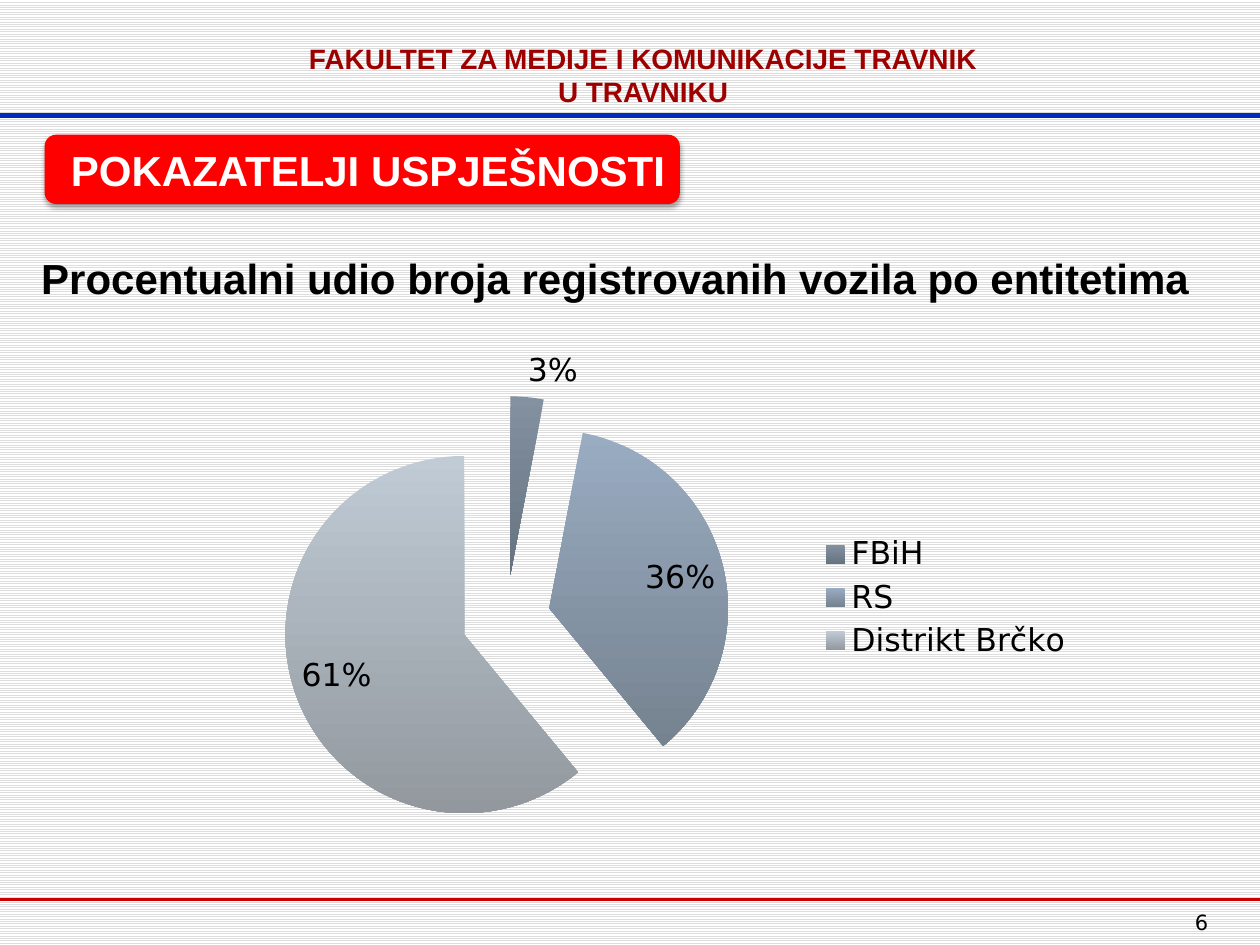
from lxml import etree
from pptx import Presentation
from pptx.chart.data import CategoryChartData
from pptx.dml.color import RGBColor
from pptx.enum.chart import XL_CHART_TYPE, XL_LABEL_POSITION, XL_LEGEND_POSITION
from pptx.enum.dml import MSO_PATTERN
from pptx.enum.shapes import MSO_CONNECTOR, MSO_SHAPE
from pptx.enum.text import MSO_ANCHOR, PP_ALIGN
from pptx.oxml import parse_xml
from pptx.oxml.ns import qn
from pptx.util import Pt

PIE = XL_CHART_TYPE.PIE
BEST_FIT = XL_LABEL_POSITION.BEST_FIT
LEGEND_RIGHT = XL_LEGEND_POSITION.RIGHT
LIGHT_HORIZONTAL = MSO_PATTERN.LIGHT_HORIZONTAL
STRAIGHT = MSO_CONNECTOR.STRAIGHT
BANNER = MSO_SHAPE.FLOWCHART_ALTERNATE_PROCESS
MIDDLE = MSO_ANCHOR.MIDDLE
LEFT, CENTER, RIGHT = PP_ALIGN.LEFT, PP_ALIGN.CENTER, PP_ALIGN.RIGHT

WIDTH, HEIGHT = 720, 540
SHARES = {"FBiH": 3, "RS": 36, "Distrikt Brčko": 61}
SLICE_GRADIENTS = [("8391A1", "66727F"), ("9AACC2", "75828F"), ("C0CBD5", "92989E")]
BANNER_SHADOW = """
<a:effectLst xmlns:a="http://schemas.openxmlformats.org/drawingml/2006/main">
  <a:outerShdw blurRad="39370" dist="22860" dir="5400000" rotWithShape="0">
    <a:srgbClr val="000000"><a:alpha val="35000"/></a:srgbClr>
  </a:outerShdw>
</a:effectLst>"""


def color(hex_code):
    return RGBColor.from_string(hex_code)


def points(box):
    return [Pt(length) for length in box]


def write(frame, text, size, hex_code, align, font="Arial", bold=True):
    frame.text = text
    for paragraph in frame.paragraphs:
        paragraph.alignment = align
        for run in paragraph.runs:
            run.font.size = Pt(size)
            run.font.name = font
            run.font.bold = bold
            run.font.color.rgb = color(hex_code)


def add_text(slide, box, *style, wrap=True, **options):
    frame = slide.shapes.add_textbox(*points(box)).text_frame
    frame.word_wrap = wrap
    write(frame, *style, **options)


def add_rule(slide, y, hex_code, weight):
    rule = slide.shapes.add_connector(STRAIGHT, *points((0, y, WIDTH, y)))
    rule.line.color.rgb = color(hex_code)
    rule.line.width = Pt(weight)
    etree.SubElement(rule._element.spPr, qn("a:effectLst"))


def add_banner(slide, box, text):
    banner = slide.shapes.add_shape(BANNER, *points(box))
    banner.fill.solid()
    banner.fill.fore_color.rgb = color("FF0000")
    banner.line.fill.background()
    banner._element.spPr.append(parse_xml(BANNER_SHADOW))
    frame = banner.text_frame
    frame.word_wrap = False
    frame.vertical_anchor = MIDDLE
    frame.margin_left = Pt(13.9)
    write(frame, text, 24, "FFFFFF", CENTER)


def add_share_chart(slide, box):
    chart_data = CategoryChartData(number_format="General")
    chart_data.categories = list(SHARES)
    chart_data.add_series("Series 1", list(SHARES.values()))
    chart = slide.shapes.add_chart(PIE, *points(box), chart_data).chart
    chart.has_title = False
    chart.font.size = Pt(18)
    chart.font.name = "DejaVu Sans"
    chart.font.color.rgb = color("000000")
    chart.has_legend = True
    chart.legend.position = LEGEND_RIGHT
    chart.legend.include_in_layout = False

    pie = chart.plots[0]
    pie.vary_by_categories = True
    pie.has_data_labels = True
    labels = pie.data_labels
    labels.show_percentage = True
    labels.show_value = False
    labels.number_format = "0%"
    labels.number_format_is_linked = False
    labels.position = BEST_FIT

    series = pie.series[0]
    for index, gradient in enumerate(SLICE_GRADIENTS):
        fill = series.points[index].format.fill
        fill.gradient()
        fill.gradient_angle = 270
        for stop, hex_code in zip(fill.gradient_stops, gradient):
            stop.color.rgb = color(hex_code)
    explosion = parse_xml(
        '<c:explosion xmlns:c="http://schemas.openxmlformats.org/drawingml/2006/chart" val="25"/>'
    )
    series._element.find(qn("c:dPt")).addprevious(explosion)


def add_frame(slide):
    """Striped background, header, rules and page number."""
    background = slide.background.fill
    background.patterned()
    background.pattern = LIGHT_HORIZONTAL
    background.fore_color.rgb = color("DDDDDD")
    background.back_color.rgb = color("FFFFFF")
    add_rule(slide, 514, "CC0000", 2.25)
    add_rule(slide, 66, "002CB8", 3)
    add_text(slide, (165, 20, 405, 46), "FAKULTET ZA MEDIJE I KOMUNIKACIJE TRAVNIK\nU TRAVNIKU",
             16, "9E0000", CENTER, wrap=False)
    add_text(slide, (541.5, 516, 156, 24), "6", 12, "000000", RIGHT,
             font="DejaVu Sans", bold=False)


def main():
    presentation = Presentation()
    presentation.slide_width, presentation.slide_height = points((WIDTH, HEIGHT))
    slide = presentation.slides.add_slide(presentation.slide_layouts[6])
    add_frame(slide)
    add_banner(slide, (25.5, 77, 363, 39.6), "POKAZATELJI USPJEŠNOSTI")
    add_share_chart(slide, (112.5, 191.5, 508, 300))
    add_text(slide, (16.5, 140.5, 703.5, 36),
             "Procentualni udio broja registrovanih vozila po entitetima", 24, "000000", LEFT)
    presentation.save("out.pptx")


if __name__ == "__main__":
    main()
